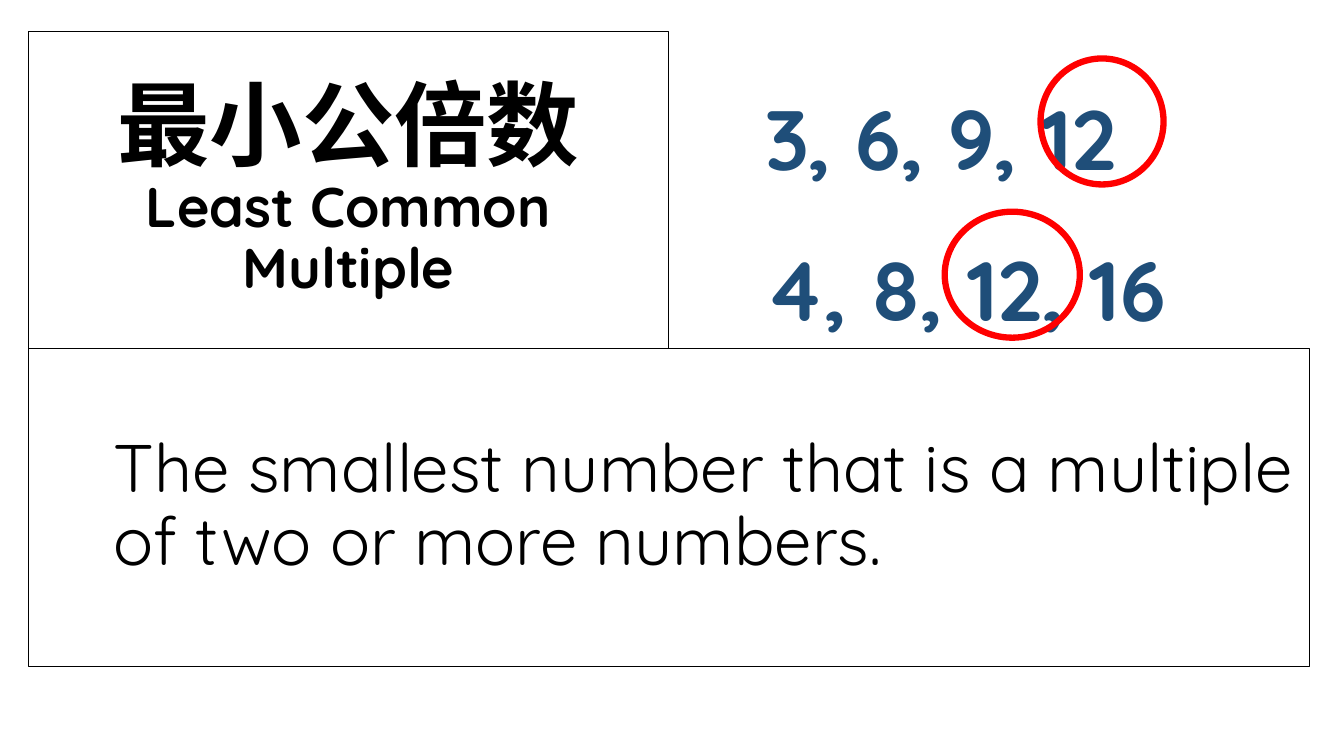
from lxml.etree import SubElement
from pptx import Presentation
from pptx.dml.color import RGBColor
from pptx.enum.shapes import MSO_SHAPE
from pptx.enum.text import MSO_ANCHOR, MSO_AUTO_SIZE, PP_ALIGN
from pptx.oxml.ns import qn
from pptx.util import Inches, Pt

BLACK = RGBColor(0x00, 0x00, 0x00)
NAVY = RGBColor(0x1F, 0x4E, 0x79)
RED = RGBColor(0xFF, 0x00, 0x00)
FONT = "Quicksand"
LEFT, TOP, HIGH = 0.28, 0.31, 3.15


class Card:
    def __init__(self, deck):
        self.slide = deck.slides.add_slide(deck.slide_layouts[1])

    def place(self, shape, left, top, width, height):
        shape.left, shape.top = Inches(left), Inches(top)
        shape.width, shape.height = Inches(width), Inches(height)

    def style(self, run, size, color=BLACK, bold=False, font=FONT):
        run.font.size, run.font.name = Pt(size), font
        run.font.bold, run.font.color.rgb = bold, color

    def frame(self, shape, *box):
        """Place and outline a placeholder, and return its text frame."""
        self.place(shape, *box)
        shape.line.color.rgb, shape.line.width = BLACK, Pt(0.75)
        text = shape.text_frame
        text.word_wrap = True
        text.auto_size = MSO_AUTO_SIZE.NONE
        text.vertical_anchor = MSO_ANCHOR.MIDDLE
        return text

    def title(self, term, gloss, *box):
        text = self.frame(self.slide.shapes.title, *box)
        text.text = f"{term}\v{gloss}"
        para = text.paragraphs[0]
        para.alignment, para.line_spacing = PP_ALIGN.CENTER, 0.9
        first, second = para.runs
        self.style(first, 66, bold=True, font="Lato")
        self.style(second, 40, bold=True)

    def body(self, words, *box):
        text = self.frame(self.slide.placeholders[1], *box)
        text.text = words
        para = text.paragraphs[0]
        props = para._p.get_or_add_pPr()
        props.set("marL", str(Inches(0.75)))
        props.set("indent", "0")
        SubElement(props, qn("a:buNone"))
        para.line_spacing, para.space_before = 0.9, Pt(0)
        self.style(para.runs[0], 48)

    def lists(self, rows, *box):
        shape = self.slide.shapes.add_textbox(*map(Inches, box))
        text = shape.text_frame
        text.word_wrap = True
        text.text = "\n".join(rows)
        for para in text.paragraphs:
            para.line_spacing = 1.5
            self.style(para.runs[0], 60, NAVY, True)

    def ring(self, *box):
        shape = self.slide.shapes.add_shape(MSO_SHAPE.OVAL, *map(Inches, box))
        shape.shadow.inherit = False
        shape.fill.background()
        shape.line.color.rgb, shape.line.width = RED, Pt(4.5)


def main():
    deck = Presentation()
    deck.slide_width, deck.slide_height = Inches(13.33), Inches(7.5)
    card = Card(deck)
    card.title("最小公倍数", "Least Common Multiple", LEFT, TOP, 6.35, HIGH)
    card.body("The smallest number that is a multiple of two or more numbers.",
              LEFT, TOP + HIGH, 12.71, HIGH)
    card.lists(["3, 6, 9, 12", "4, 8, 12, 16"], 7.49, TOP, 5.01, 3.13)
    card.ring(10.32, 0.58, 1.22, 1.25)
    card.ring(9.37, 2.1, 1.34, 1.25)
    deck.save("out.pptx")


if __name__ == "__main__":
    main()
